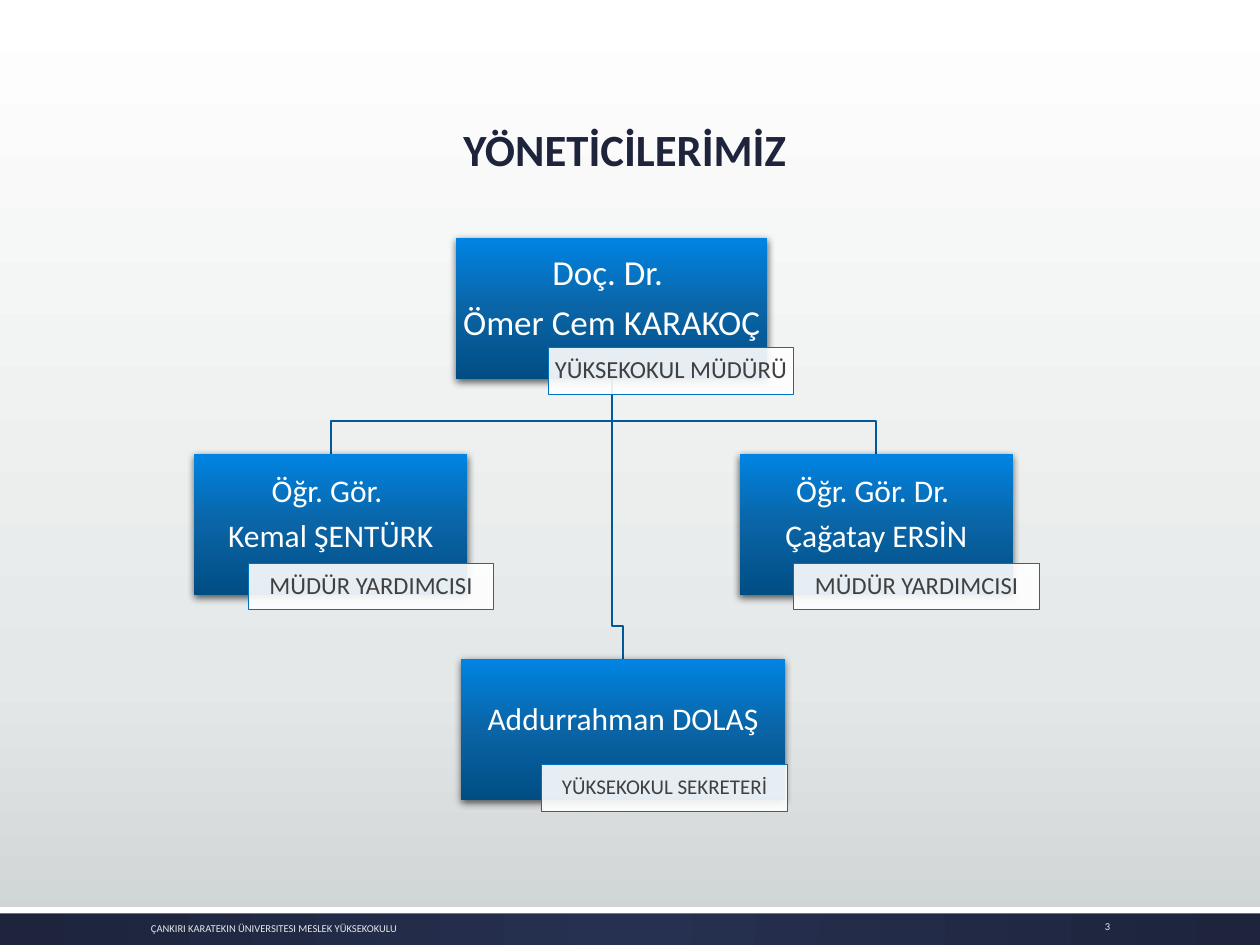
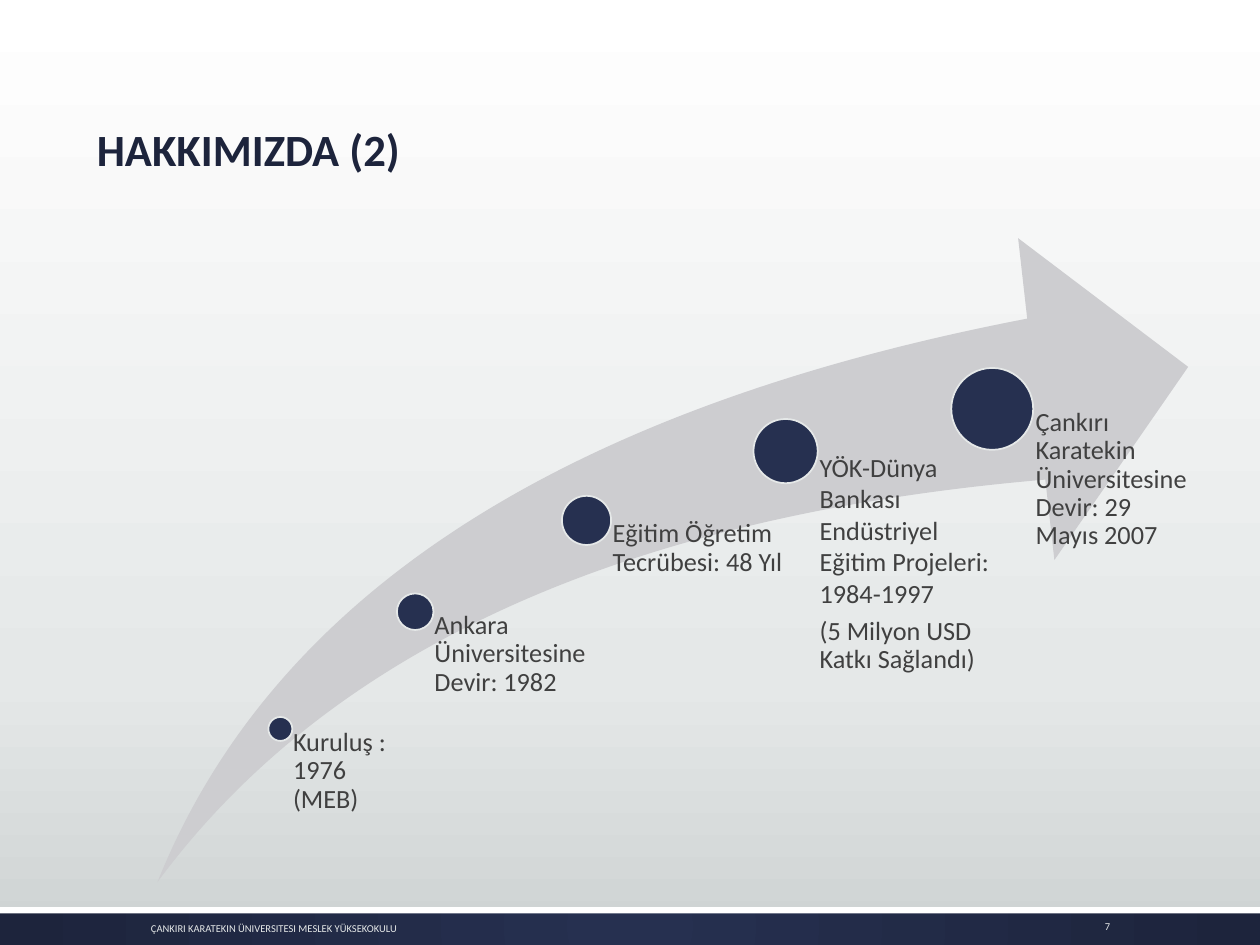
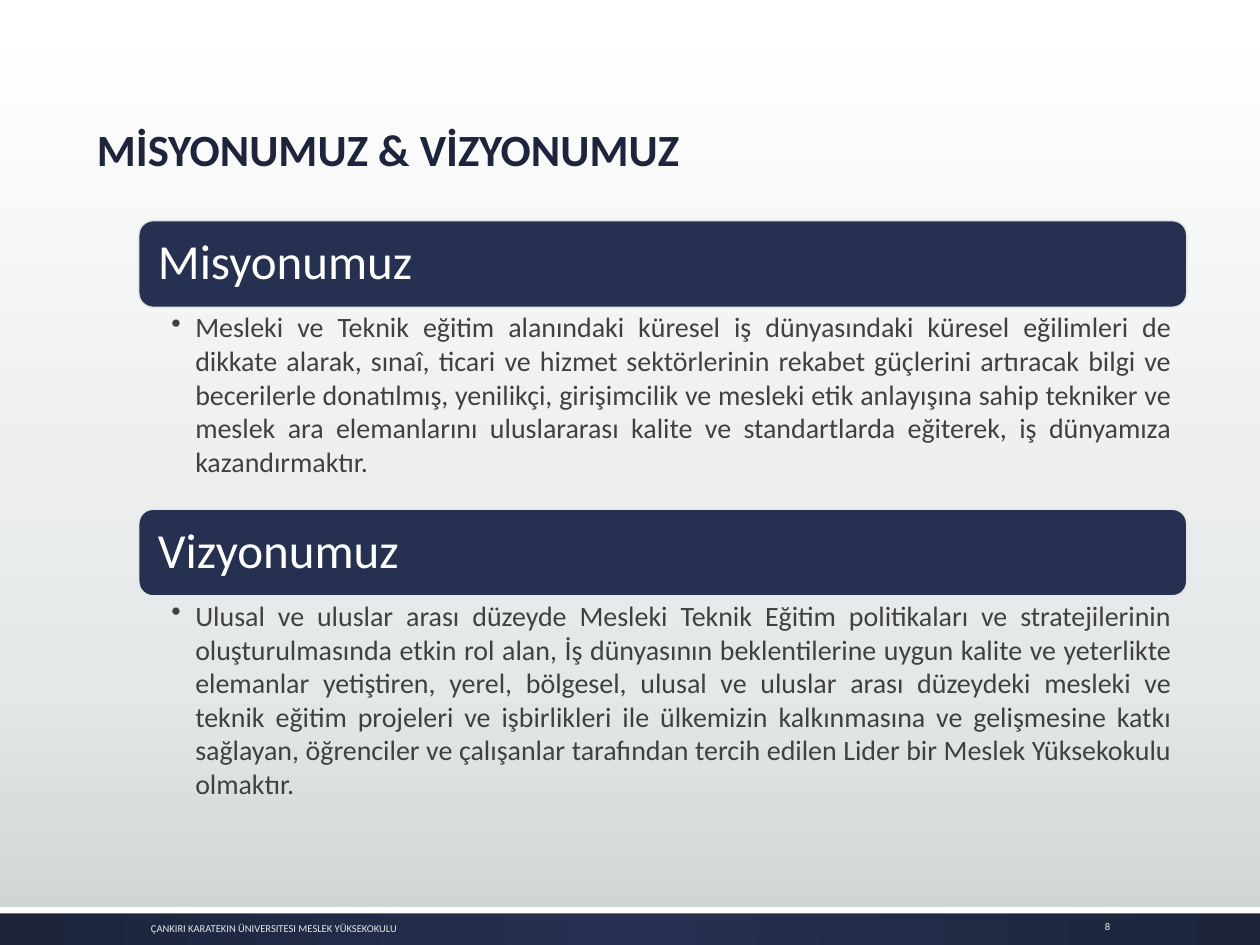
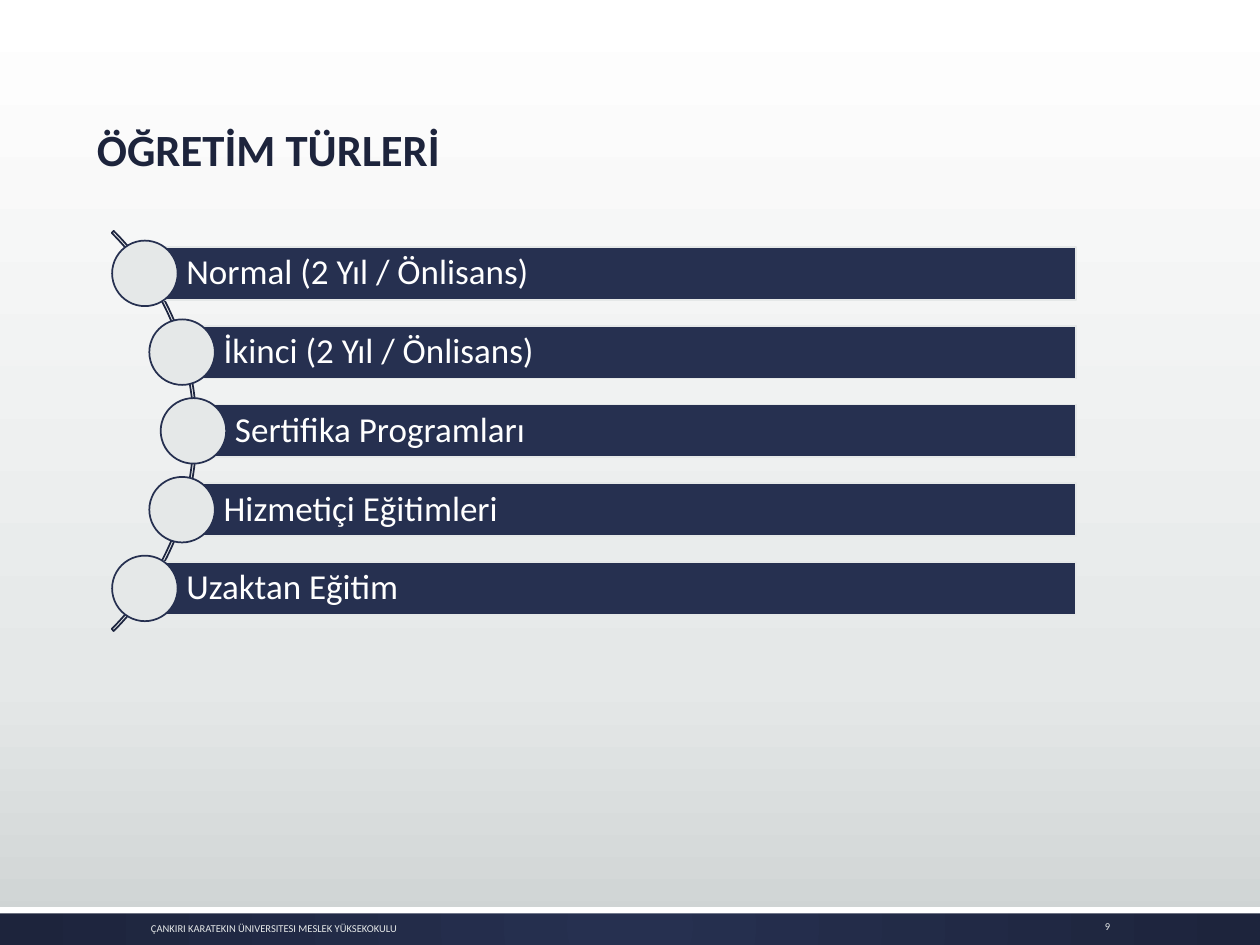
from collections import namedtuple
from itertools import repeat
from math import sqrt

from lxml.etree import SubElement
from pptx import Presentation
from pptx.dml.color import RGBColor
from pptx.enum.shapes import MSO_SHAPE
from pptx.enum.text import MSO_ANCHOR, PP_ALIGN
from pptx.oxml.ns import qn
from pptx.util import Emu, Inches, Pt

# Theme
FONT = "Calibri"
NAVY, DEEP, INK = "263050", "1D243C", "404040"
WHITE, MIST = "FFFFFF", "E5E8E8"
BACKGROUND = [(0, WHITE), (72, MIST), (100, "CDD2D2")]
NODE_BLUE = [(0, "0084E3"), (50, "0A64A5"), (100, "004D84")]
FOOTER = "ÇANKIRI KARATEKIN ÜNIVERSITESI MESLEK YÜKSEKOKULU"

# Grid: 100 columns by 75 rows of square cells
COLS, ROWS = 100, 75
CELL = Inches(10) // COLS

Box = namedtuple("Box", "x y w h")


def grid(n):
    return Emu(round(n * CELL))


def rgb(color):
    return RGBColor.from_string(color)


def set_gradient(fill, element, stops, radial=False):
    fill.gradient()
    grad = element.find(".//" + qn("a:gradFill"))
    for child in list(grad):
        grad.remove(child)
    stop_list = SubElement(grad, qn("a:gsLst"))
    for pos, color in stops:
        stop = SubElement(stop_list, qn("a:gs"), pos=str(pos * 1000))
        SubElement(stop, qn("a:srgbClr"), val=color)
    if radial:
        path = SubElement(grad, qn("a:path"), path="circle")
        SubElement(path, qn("a:fillToRect"), dict.fromkeys("ltrb", "50000"))
    else:
        SubElement(grad, qn("a:lin"), ang="5400000", scaled="0")


def style(shape, fill=None, line=None, weight=1, radial=False):
    shape.shadow.inherit = False
    if fill is None:
        shape.fill.background()
    elif isinstance(fill, list):
        set_gradient(shape.fill, shape._element.spPr, fill, radial)
    else:
        shape.fill.solid()
        shape.fill.fore_color.rgb = rgb(fill)
    if line:
        shape.line.color.rgb = rgb(line)
        shape.line.width = Pt(weight)
    else:
        shape.line.fill.background()
    return shape


def add_shape(s, kind, box, **look):
    return style(s.shapes.add_shape(kind, *map(grid, box)), **look)


def add_alpha(shape, percent):
    color = shape._element.spPr.find(qn("a:solidFill") + "/" + qn("a:srgbClr"))
    SubElement(color, qn("a:alpha"), val=str(percent * 1000))


def add_shadow(shape):
    effects = shape._element.spPr.find(qn("a:effectLst"))
    shadow = SubElement(effects, qn("a:outerShdw"), blurRad=str(Pt(4.5)), dist=str(Pt(1.5)),
                        dir="5400000", algn="ctr", rotWithShape="0")
    color = SubElement(shadow, qn("a:srgbClr"), val="000000")
    SubElement(color, qn("a:alpha"), val="63000")


def write(shape, text, size, color=INK, bold=False, align=PP_ALIGN.LEFT, anchor=MSO_ANCHOR.MIDDLE,
          insets=(0.1, 0.05, 0.1, 0.05), spacing=repeat(0.9), after=0.35, bullet=None):
    """Fill a shape with text, one paragraph a line; insets are in inches."""
    tf = shape.text_frame
    tf.word_wrap = True
    tf.vertical_anchor = anchor
    tf.margin_left, tf.margin_top, tf.margin_right, tf.margin_bottom = map(Inches, insets)
    for i, (line, line_spacing) in enumerate(zip(text.split("\n"), spacing)):
        p = tf.add_paragraph() if i else tf.paragraphs[0]
        p.alignment, p.line_spacing, p.space_after = align, line_spacing, Pt(after * size)
        if bullet:
            pPr = p._p.get_or_add_pPr()
            pPr.set("marL", str(Inches(0.19)))
            pPr.set("indent", str(Inches(-0.19)))
            SubElement(pPr, qn("a:buChar"), char=bullet)
        r = p.add_run()
        r.text = line
        r.font.name, r.font.size, r.font.bold = FONT, Pt(size), bold
        r.font.color.rgb = rgb(color)


def add_text(s, box, text, size, **fmt):
    write(s.shapes.add_textbox(*map(grid, box)), text, size, **fmt)


def add_page(prs, title, number, align=PP_ALIGN.LEFT):
    """Blank slide with background, title and footer band."""
    s = prs.slides.add_slide(prs.slide_layouts[6])
    set_gradient(s.background.fill, s._element, BACKGROUND)
    band = Box(0, 72, COLS, 3)
    add_shape(s, MSO_SHAPE.RECTANGLE, band, fill=[(0, NAVY), (100, DEEP)], radial=True)
    add_shape(s, MSO_SHAPE.RECTANGLE, band._replace(h=0.5), fill=WHITE)
    add_text(s, Box(6.7, 5.1, 85.8, 9.4), title, 25.5, color=DEEP, bold=True, align=align,
             anchor=MSO_ANCHOR.BOTTOM, after=0)
    small = dict(size=6, color=MIST, spacing=[1], after=0)
    add_text(s, Box(11, band.y + 0.4, 58.7, 2.6), FOOTER, **small)
    add_text(s, Box(83.8, band.y + 0.2, 5.3, 2.6), str(number), align=PP_ALIGN.RIGHT, **small)
    return s


# Organisation chart
def add_elbow(s, start, end, rise=2.6):
    """Line that goes down, across and down again."""
    (x1, y1), (x2, y2) = start, end
    points = [(x1, y1), (x1, y2 - rise), (x2, y2 - rise), (x2, y2)]
    points = [(grid(x), grid(y)) for x, y in points]
    builder = s.shapes.build_freeform(*points[0], scale=1.0)
    builder.add_line_segments(points[1:], close=False)
    style(builder.convert_to_shape(), line="005A9A")


def add_node(s, box, name, size, role, role_size, overhang=2.1, drop=8.7):
    card = add_shape(s, MSO_SHAPE.RECTANGLE, box, fill=NODE_BLUE)
    add_shadow(card)
    write(card, name, size, color=WHITE, align=PP_ALIGN.CENTER, insets=(0.01, 0.01, 0.01, 0.16))
    tag_w = 19.5
    tag_box = Box(box.x + box.w - tag_w + overhang, box.y + drop, tag_w, 3.7)
    tag = add_shape(s, MSO_SHAPE.RECTANGLE, tag_box, fill=WHITE, line="0070C0", weight=0.5)
    add_alpha(tag, 90)
    write(tag, role, role_size, align=PP_ALIGN.CENTER, insets=(0.03, 0.01, 0.03, 0.01))


def add_org_chart(s, box):
    card_h = 11.2
    deputy = "MÜDÜR YARDIMCISI"
    people = [  # column, row, width, then the text of the node
        (20.8, 0, 24.7, "Doç. Dr. \nÖmer Cem KARAKOÇ", 20, "YÜKSEKOKUL MÜDÜRÜ", 14),
        (0, 17.1, 21.7, "Öğr. Gör. \nKemal ŞENTÜRK", 18, deputy, 14),
        (43.3, 17.1, 21.7, "Öğr. Gör. Dr. \nÇağatay ERSİN", 18, deputy, 14),
        (21.2, 33.4, 25.7, "Addurrahman DOLAŞ", 18, "YÜKSEKOKUL SEKRETERİ", 12, 0.2, 8.4),
    ]
    cards = [Box(box.x + x, box.y + y, w, card_h) for x, y, w, *_ in people]
    head, *staff = cards
    for card in reversed(staff):
        add_elbow(s, (head.x + head.w / 2, head.y + card_h), (card.x + card.w / 2, card.y))
    for card, person in zip(cards, people):
        add_node(s, card, *person[3:])


# Timeline on a rising arrow
def add_timeline(s, box):
    arrow = add_shape(s, MSO_SHAPE.SWOOSH_ARROW, box, fill="CDCDD0")
    arrow.adjustments[0] = arrow.adjustments[1] = 0.25
    milestones = [  # centre column and row, dot size, text width, text
        (9.75, 38.95, 1.9, 10.7, "Kuruluş : 1976 (MEB)"),
        (20.45, 29.65, 2.9, 13.6, "Ankara Üniversitesine Devir: 1982"),
        (34.05, 22.4, 3.9, 15.8, "Eğitim Öğretim Tecrübesi: 48 Yıl"),
        (49.85, 16.9, 5.1, 16.4, "YÖK-Dünya Bankası Endüstriyel Eğitim Projeleri: 1984-1997\n"
                                 "(5 Milyon USD Katkı Sağlandı)"),
        (66.25, 13.55, 6.5, 16.4, "Çankırı Karatekin Üniversitesine Devir: 29 Mayıs 2007"),
    ]
    for cx, cy, size, width, text in milestones:
        x, y = box.x + cx, box.y + cy
        add_shape(s, MSO_SHAPE.OVAL, Box(x - size / 2, y - size / 2, size, size),
                  fill=NAVY, line=MIST)
        add_text(s, Box(x, y, width, box.h - cy), text, 15, anchor=MSO_ANCHOR.TOP,
                 insets=(0.053 * size, 0, 0, 0),
                 spacing=(1, 0.9) if "\n" in text else [0.9])


# Headed sections
def add_section(s, box, heading, body):
    head_h = 6.9
    bar = add_shape(s, MSO_SHAPE.ROUNDED_RECTANGLE, box._replace(h=head_h), fill=NAVY, line=MIST)
    write(bar, heading, 28, color=WHITE, insets=[0.12] * 4)
    add_text(s, Box(box.x, box.y + head_h, box.w, box.h - head_h), body, 16,
             align=PP_ALIGN.JUSTIFY, anchor=MSO_ANCHOR.TOP, insets=(0.26, 0.02, 0.12, 0.02),
             spacing=[1], after=0.2, bullet="•")


def add_sections(s, box):
    sections = [
        (22.9, "Misyonumuz",
         "Mesleki ve Teknik eğitim alanındaki küresel iş dünyasındaki küresel eğilimleri de "
         "dikkate alarak, sınaî, ticari ve hizmet sektörlerinin rekabet güçlerini artıracak "
         "bilgi ve becerilerle donatılmış, yenilikçi, girişimcilik ve mesleki etik anlayışına "
         "sahip tekniker ve meslek ara elemanlarını uluslararası kalite ve standartlarda "
         "eğiterek, iş dünyamıza kazandırmaktır."),
        (25.4, "Vizyonumuz",
         "Ulusal ve uluslar arası düzeyde Mesleki Teknik Eğitim politikaları ve "
         "stratejilerinin oluşturulmasında etkin rol alan, İş dünyasının beklentilerine uygun "
         "kalite ve yeterlikte elemanlar yetiştiren, yerel, bölgesel, ulusal ve uluslar arası "
         "düzeydeki mesleki ve teknik eğitim projeleri ve işbirlikleri ile ülkemizin "
         "kalkınmasına ve gelişmesine katkı sağlayan, öğrenciler ve çalışanlar tarafından "
         "tercih edilen Lider bir Meslek Yüksekokulu olmaktır."),
    ]
    y = box.y
    for height, heading, body in sections:
        add_section(s, box._replace(y=y, h=height), heading, body)
        y += height


# List whose dots follow an arc
def add_arc_list(s, box, items):
    dot, bar_h, radius = 5.2, 4.2, 22.2
    pitch = (box.h - dot) / (len(items) - 1)
    cx, cy = box.x - 15.75, box.y + box.h / 2
    arc_size = 44.9
    arc = add_shape(s, MSO_SHAPE.BLOCK_ARC,
                    Box(cx - arc_size / 2, cy - arc_size / 2, arc_size, arc_size), line="1E2640")
    for i, value in enumerate((189, 27, 0.005)):
        arc.adjustments[i] = value
    for i, item in enumerate(items):
        y = box.y + dot / 2 + i * pitch
        x = cx + sqrt(radius ** 2 - (y - cy) ** 2)
        bar = add_shape(s, MSO_SHAPE.RECTANGLE,
                        Box(x, y - bar_h / 2, box.x + box.w - x, bar_h), fill=NAVY, line=MIST)
        write(bar, item, 20, color=WHITE, insets=(0.33, 0.06, 0.06, 0.06))
        add_shape(s, MSO_SHAPE.OVAL, Box(x - dot / 2, y - dot / 2, dot, dot),
                  fill=MIST, line=NAVY)


def main():
    prs = Presentation()
    prs.slide_width, prs.slide_height = grid(COLS), grid(ROWS)

    s = add_page(prs, "YÖNETİCİLERİMİZ", 3, align=PP_ALIGN.CENTER)
    add_org_chart(s, Box(15.4, 18.9, 67.2, 45.5))

    s = add_page(prs, "HAKKIMIZDA (2)", 7)
    add_timeline(s, Box(12.5, 18.9, 81.8, 51.1))

    s = add_page(prs, "MİSYONUMUZ & VİZYONUMUZ", 8)
    add_sections(s, Box(11, 17.5, 83.2, 48.3))

    s = add_page(prs, "ÖĞRETİM TÜRLERİ", 9)
    add_arc_list(s, Box(8.9, 19.1, 76.5, 30.2),
                 ["Normal (2 Yıl / Önlisans)", "İkinci (2 Yıl / Önlisans)",
                  "Sertifika Programları", "Hizmetiçi Eğitimleri", "Uzaktan Eğitim"])

    prs.save("out.pptx")


if __name__ == "__main__":
    main()
